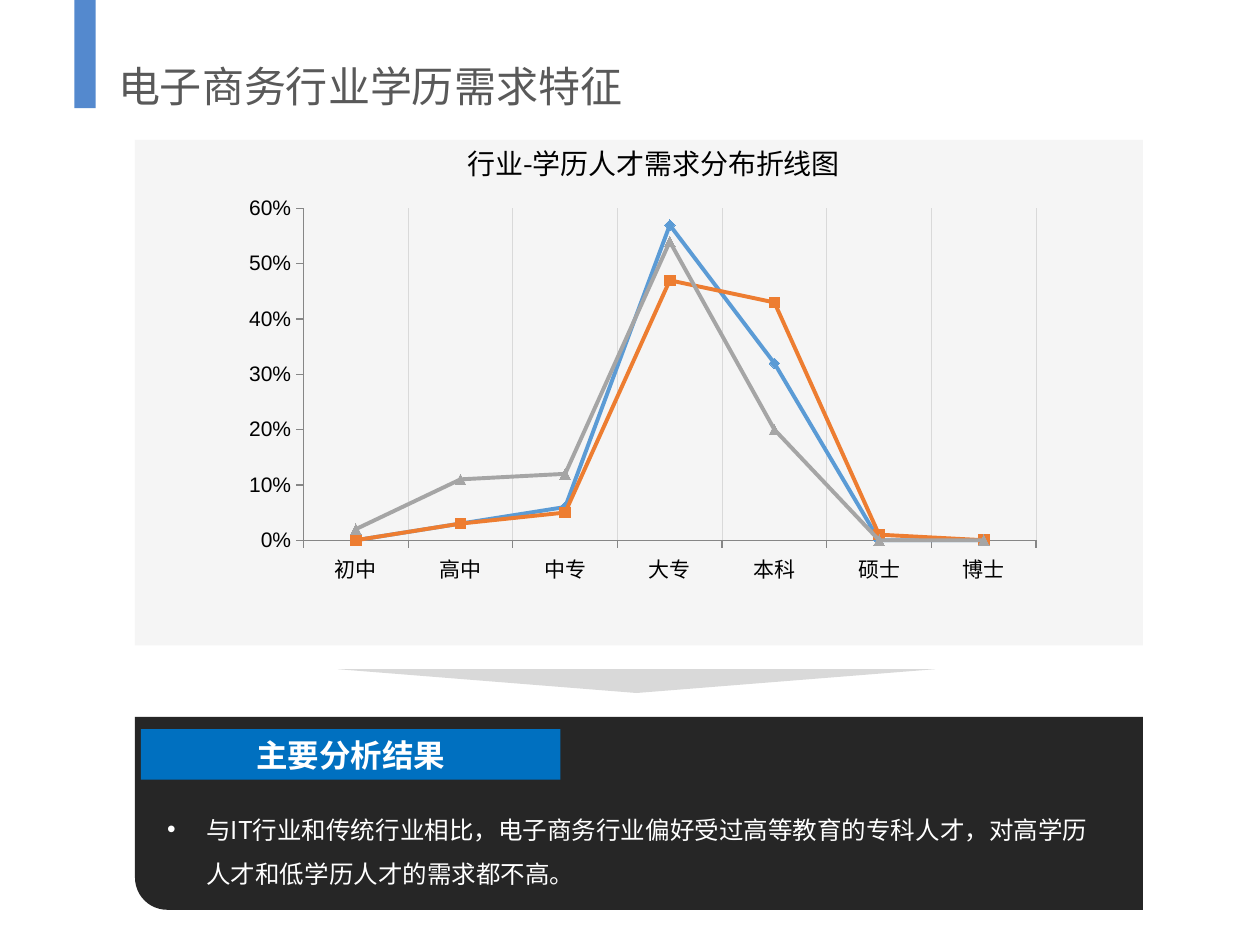
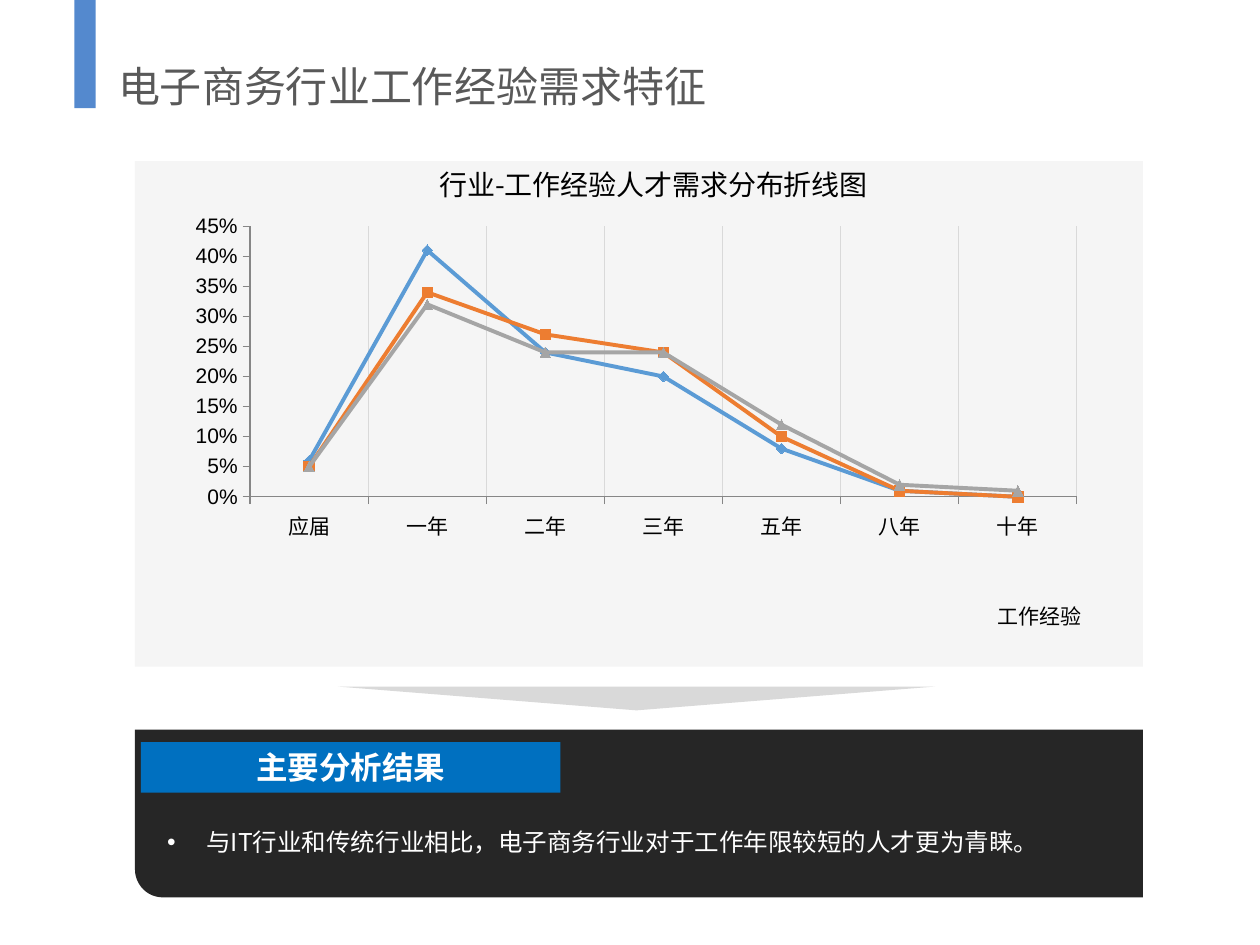
import dataclasses
import typing

import pptx
import pptx.chart.data
import pptx.dml.color
import pptx.enum.chart
import pptx.enum.shapes
import pptx.enum.text
import pptx.oxml
import pptx.oxml.ns
import pptx.util

Cm = pptx.util.Cm
Pt = pptx.util.Pt
RGB = pptx.dml.color.RGBColor
Shapes = pptx.enum.shapes.MSO_SHAPE
Align = pptx.enum.text.PP_ALIGN
Anchor = pptx.enum.text.MSO_ANCHOR
Marker = pptx.enum.chart.XL_MARKER_STYLE
qn = pptx.oxml.ns.qn


class Box(typing.NamedTuple):
    left: float
    top: float
    width: float
    height: float

    def lengths(self) -> list:
        return [Cm(value) for value in self]


class Style(typing.NamedTuple):
    size: float
    color: str
    bold: bool = False
    face: str = "Noto Sans CJK SC"


class Industry(typing.NamedTuple):
    name: str
    color: str
    marker: typing.Any


@dataclasses.dataclass(frozen=True)
class Theme:
    accent: str = "5489CE"
    panel: str = "F5F5F5"
    arrow: str = "D9D9D9"
    result: str = "262626"
    tag: str = "0070C0"
    axis: str = "868686"
    grid: str = "D9D9D9"
    heading: Style = Style(24, "595959")
    chart_title: Style = Style(16, "000000")
    tag_text: Style = Style(18, "FFFFFF", True)
    finding: Style = Style(14, "FFFFFF")
    category: Style = Style(12, "000000")
    percent: Style = Style(12, "000000", face="Arial")
    chart_base: Style = Style(10, "000000", face="Calibri")
    line_width: float = 2.25
    marker_size: int = 6


@dataclasses.dataclass(frozen=True)
class DemandChart:
    box: Box
    plot: tuple
    categories: tuple
    shares: tuple
    maximum: float
    step: float
    grid_width: float
    axis_title: str = ""
    axis_title_at: tuple = ()


@dataclasses.dataclass(frozen=True)
class Feature:
    heading: str
    chart_title: str
    finding: str
    panel_top: float
    arrow_top: float
    result_top: float
    result_height: float
    finding_height: float
    chart: DemandChart


THEME = Theme()

INDUSTRIES = (
    Industry("电子商务行业", "5B9BD5", Marker.DIAMOND),
    Industry("IT行业", "ED7D31", Marker.SQUARE),
    Industry("传统行业", "A5A5A5", Marker.TRIANGLE),
)

FEATURES = (
    Feature(
        heading="电子商务行业学历需求特征",
        chart_title="行业-学历人才需求分布折线图",
        finding="与IT行业和传统行业相比，电子商务行业偏好受过高等教育的专科人才，"
                "对高学历人才和低学历人才的需求都不高。",
        panel_top=2.82,
        arrow_top=13.49,
        result_top=14.45,
        result_height=3.89,
        finding_height=2.67,
        chart=DemandChart(
            box=Box(3.05, 3.48, 19.18, 9.04),
            plot=(0.16, 0.08, 0.77, 0.74),
            categories=("初中", "高中", "中专", "大专", "本科", "硕士", "博士"),
            shares=(
                (0, 0.03, 0.06, 0.57, 0.32, 0, 0),
                (0, 0.03, 0.05, 0.47, 0.43, 0.01, 0),
                (0.02, 0.11, 0.12, 0.54, 0.2, 0, 0),
            ),
            maximum=0.6,
            step=0.1,
            grid_width=0.5,
        ),
    ),
    Feature(
        heading="电子商务行业工作经验需求特征",
        chart_title="行业-工作经验人才需求分布折线图",
        finding="与IT行业和传统行业相比，电子商务行业对于工作年限较短的人才更为青睐。",
        panel_top=3.25,
        arrow_top=13.84,
        result_top=14.71,
        result_height=3.38,
        finding_height=1.85,
        chart=DemandChart(
            box=Box(3.56, 4.19, 18.52, 9.25),
            plot=(0.08, 0.04, 0.9, 0.59),
            categories=("应届", "一年", "二年", "三年", "五年", "八年", "十年"),
            shares=(
                (0.06, 0.41, 0.24, 0.2, 0.08, 0.01, 0),
                (0.05, 0.34, 0.27, 0.24, 0.1, 0.01, 0),
                (0.05, 0.32, 0.24, 0.24, 0.12, 0.02, 0.01),
            ),
            maximum=0.45,
            step=0.05,
            grid_width=0.75,
            axis_title="工作经验",
            axis_title_at=(0.89, 0.84),
        ),
    ),
)


def apply_style(font: typing.Any, style: Style) -> None:
    font.size = Pt(style.size)
    font.bold = style.bold
    font.color.rgb = RGB.from_string(style.color)
    font.name = style.face
    east_asian = pptx.oxml.parse_xml(
        f'<a:ea {pptx.oxml.ns.nsdecls("a")} typeface="{style.face}"/>')
    font._rPr.append(east_asian)


def write(frame: typing.Any, text: str, style: Style, align: typing.Any = Align.LEFT) -> typing.Any:
    frame.word_wrap = True
    paragraph = frame.paragraphs[0]
    paragraph.alignment = align
    run = paragraph.add_run()
    run.text = text
    apply_style(run.font, style)
    return paragraph


def add_block(slide: typing.Any, kind: typing.Any, box: Box, color: str, rotation: float = 0) -> typing.Any:
    block = slide.shapes.add_shape(kind, *box.lengths())
    block.shadow.inherit = False
    block.fill.solid()
    block.fill.fore_color.rgb = RGB.from_string(color)
    block.line.fill.background()
    block.rotation = rotation
    return block


def add_text(slide: typing.Any, box: Box, text: str, style: Style, align: typing.Any = Align.LEFT) -> typing.Any:
    frame = slide.shapes.add_textbox(*box.lengths()).text_frame
    return write(frame, text, style, align)


def add_bullet(paragraph: typing.Any) -> None:
    paragraph.line_spacing = 1.5
    properties = paragraph._p.get_or_add_pPr()
    properties.set("marL", str(Cm(0.79)))
    properties.set("indent", str(-Cm(0.79)))
    for tag, name, value in (("buFont", "typeface", "Arial"), ("buChar", "char", "•")):
        properties.append(pptx.oxml.parse_xml(
            f'<a:{tag} {pptx.oxml.ns.nsdecls("a")} {name}="{value}"/>'))


def set_layout(parent: typing.Any, index: int, place: tuple, inner: bool = False) -> None:
    for old in parent.findall(qn("c:layout")):
        parent.remove(old)
    target = '<c:layoutTarget val="inner"/>' if inner else ""
    modes = '<c:xMode val="edge"/><c:yMode val="edge"/>'
    sizes = "".join(f'<c:{side} val="{value}"/>' for side, value in zip("xywh", place))
    parent.insert(index, pptx.oxml.parse_xml(
        f'<c:layout {pptx.oxml.ns.nsdecls("c")}><c:manualLayout>'
        f'{target}{modes}{sizes}</c:manualLayout></c:layout>'))


def draw_line(line: typing.Any, color: str, width: float) -> None:
    line.color.rgb = RGB.from_string(color)
    line.width = Pt(width)


def add_demand_chart(slide: typing.Any, demand: DemandChart) -> None:
    data = pptx.chart.data.CategoryChartData(number_format="0%")
    data.categories = demand.categories
    for industry, shares in zip(INDUSTRIES, demand.shares):
        data.add_series(industry.name, shares)
    chart = slide.shapes.add_chart(
        pptx.enum.chart.XL_CHART_TYPE.LINE_MARKERS, *demand.box.lengths(), data).chart
    chart.has_title = False
    chart.has_legend = False
    apply_style(chart.font, THEME.chart_base)
    chart.plots[0].vary_by_categories = False
    set_layout(chart._chartSpace.chart.plotArea, 0, demand.plot, inner=True)

    for industry, series in zip(INDUSTRIES, chart.plots[0].series):
        series.smooth = False
        draw_line(series.format.line, industry.color, THEME.line_width)
        series.marker.style = industry.marker
        series.marker.size = THEME.marker_size
        series.marker.format.fill.solid()
        series.marker.format.fill.fore_color.rgb = RGB.from_string(industry.color)
        draw_line(series.marker.format.line, industry.color, 0.75)

    levels, shares = chart.category_axis, chart.value_axis
    for axis, style in ((levels, THEME.category), (shares, THEME.percent)):
        apply_style(axis.tick_labels.font, style)
        axis.major_tick_mark = pptx.enum.chart.XL_TICK_MARK.OUTSIDE
        axis.minor_tick_mark = pptx.enum.chart.XL_TICK_MARK.NONE
        draw_line(axis.format.line, THEME.axis, 0.75)
    levels.has_major_gridlines = True
    draw_line(levels.major_gridlines.format.line, THEME.grid, demand.grid_width)
    shares.has_major_gridlines = False
    shares.minimum_scale = 0
    shares.maximum_scale = demand.maximum
    shares.major_unit = demand.step
    shares.tick_labels.number_format = "0%"
    shares.tick_labels.number_format_is_linked = False

    if demand.axis_title:
        title = levels.axis_title
        run = title.text_frame.paragraphs[0].add_run()
        run.text = demand.axis_title
        apply_style(run.font, THEME.category)
        set_layout(title._element, 1, demand.axis_title_at)


def add_feature(deck: typing.Any, feature: Feature) -> None:
    slide = deck.slides.add_slide(deck.slide_layouts[6])
    add_block(slide, Shapes.RECTANGLE, Box(1.5, 0, 0.43, 2.18), THEME.accent)
    add_text(slide, Box(2.13, 1.09, 12.8, 1.27), feature.heading, THEME.heading)

    add_block(slide, Shapes.RECTANGLE, Box(2.72, feature.panel_top, 20.32, 10.19), THEME.panel)
    add_demand_chart(slide, feature.chart)
    add_text(slide, Box(7.34, feature.panel_top, 11.68, 0.94), feature.chart_title,
             THEME.chart_title, Align.CENTER)
    add_block(slide, Shapes.ISOSCELES_TRIANGLE, Box(6.81, feature.arrow_top, 12.04, 0.48),
              THEME.arrow, rotation=180)

    top = feature.result_top
    add_block(slide, Shapes.ROUND_1_RECTANGLE, Box(2.72, top, 20.32, feature.result_height),
              THEME.result, rotation=180)
    add_bullet(add_text(slide, Box(3.12, top + 1.55, 19.56, feature.finding_height),
                        feature.finding, THEME.finding))
    tag = add_block(slide, Shapes.RECTANGLE, Box(2.84, top + 0.25, 8.46, 1.02), THEME.tag)
    tag.text_frame.vertical_anchor = Anchor.MIDDLE
    write(tag.text_frame, "主要分析结果", THEME.tag_text, Align.CENTER)


def main() -> None:
    deck = pptx.Presentation()
    deck.slide_width, deck.slide_height = Cm(25.4), Cm(19.05)
    for feature in FEATURES:
        add_feature(deck, feature)
    deck.save("out.pptx")


if __name__ == "__main__":
    main()
